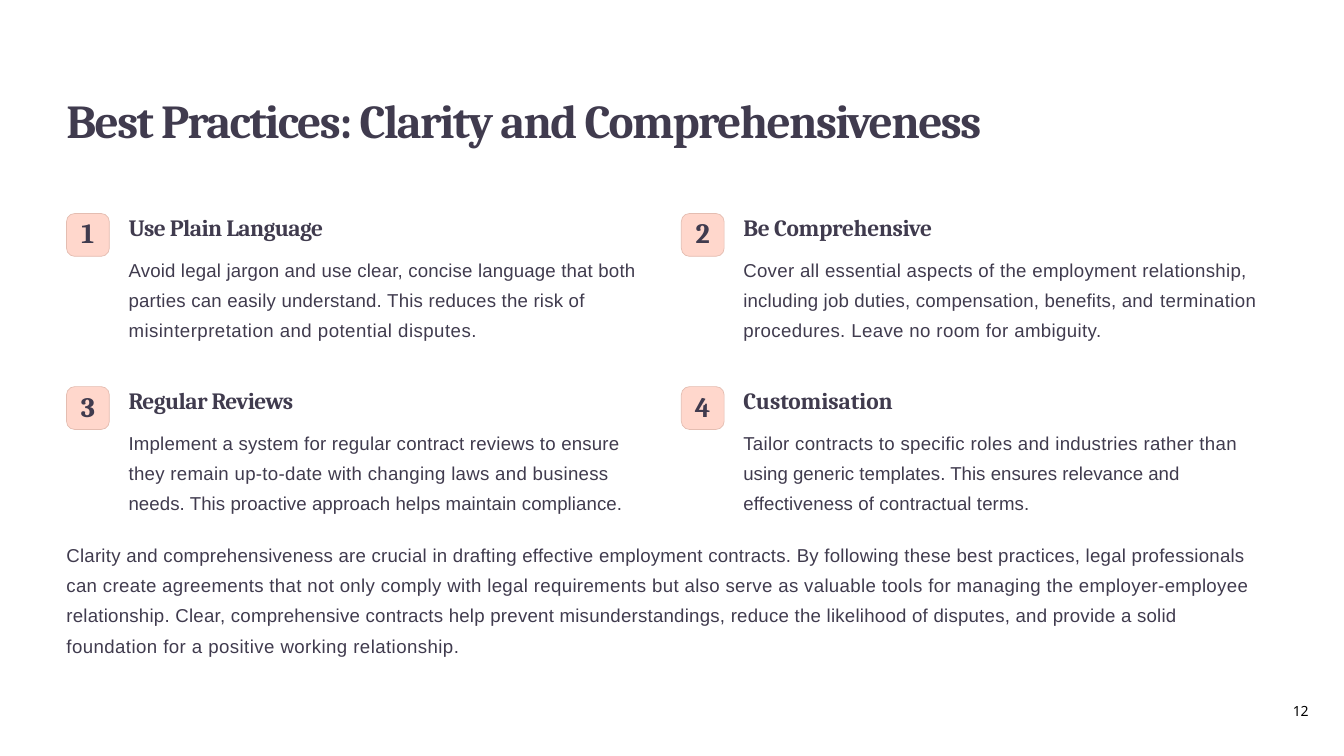
from dataclasses import dataclass

from pptx import Presentation
from pptx.dml.color import RGBColor
from pptx.enum.shapes import MSO_SHAPE
from pptx.enum.text import MSO_ANCHOR, PP_ALIGN
from pptx.util import Pt

INK = "403B4E"
PEACH = "FFD7CC"
PEACH_EDGE = "E4BDB1"
HEADING_FONT = "Cambria"
BODY_FONT = "Arial"

LEFT, TOP = 57, 183
COLUMN_STEP, ROW_STEP = 527, 148.4
BADGE_SIZE = 36.7
TEXT_OFFSET = 53.3


@dataclass(frozen=True)
class Line:
    """Text that fills one line, with its letter spacing in points."""
    text: str
    spacing: float


@dataclass(frozen=True)
class Practice:
    heading: Line
    body: tuple[Line, ...]


TITLE = Line("Best Practices: Clarity and Comprehensiveness", -1.41)

PRACTICES = [
    Practice(Line("Use Plain Language", -0.51), (
        Line("Avoid legal jargon and use clear, concise language that both ", 0.17),
        Line("parties can easily understand. This reduces the risk of ", 0.19),
        Line("misinterpretation and potential disputes.", 0.43))),
    Practice(Line("Be Comprehensive", -0.31), (
        Line("Cover all essential aspects of the employment relationship, ", 0.28),
        Line("including job duties, compensation, benefits, and ", 0.16),
        Line("termination procedures. Leave no room for ambiguity.", 0.34))),
    Practice(Line("Regular Reviews", -0.53), (
        Line("Implement a system for regular contract reviews to ensure ", 0.21),
        Line("they remain up-to-date with changing laws and business ", 0.27),
        Line("needs. This proactive approach helps maintain compliance.", 0.08))),
    Practice(Line("Customisation", -0.1), (
        Line("Tailor contracts to specific roles and industries rather than ", 0.27),
        Line("using generic templates. This ensures relevance and ", 0.02),
        Line("effectiveness of contractual terms.", 0.12))),
]

SUMMARY = (
    Line("Clarity and comprehensiveness are crucial in drafting effective employment "
         "contracts. By following these best practices, legal professionals ", 0.22),
    Line("can create agreements that not only comply with legal requirements but also "
         "serve as valuable tools for managing the employer-employee ", 0.3),
    Line("relationship. Clear, comprehensive contracts help prevent misunderstandings, "
         "reduce the likelihood of disputes, and provide a solid ", 0.24),
    Line("foundation for a positive working relationship.", 0.4),
)


def rgb(color: str) -> RGBColor:
    return RGBColor.from_string(color)


def set_insets(tf, left: float = 0, top: float = 0) -> None:
    tf.margin_left, tf.margin_top = Pt(left), Pt(top)
    tf.margin_right = tf.margin_bottom = Pt(0)
    tf.vertical_anchor = MSO_ANCHOR.TOP


def add_frame(s, left: float, top: float, width: float, height: float,
              inset_left: float = 0.9, inset_top: float = 0.9):
    tf = s.shapes.add_textbox(Pt(left), Pt(top), Pt(width), Pt(height)).text_frame
    tf.word_wrap = True
    set_insets(tf, inset_left, inset_top)
    return tf


def write(p, *lines: Line, size: float, font: str, color: str = INK, bold: bool = False,
          before: float = 1, line_spacing: float = 1, align=PP_ALIGN.LEFT) -> None:
    """Fill a paragraph with lines that flow on from one another."""
    p.space_before, p.line_spacing, p.alignment = Pt(before), line_spacing, align
    for line in lines:
        r = p.add_run()
        r.text = line.text
        r.font.name, r.font.size, r.font.bold = font, Pt(size), bold
        r.font.color.rgb = rgb(color)
        r._r.get_or_add_rPr().set("spc", str(round(line.spacing * 100)))


def add_badge(s, number: int, left: float, top: float) -> None:
    sp = s.shapes.add_shape(MSO_SHAPE.ROUNDED_RECTANGLE, Pt(left), Pt(top),
                            Pt(BADGE_SIZE), Pt(BADGE_SIZE))
    sp.adjustments[0] = 0.19
    sp.shadow.inherit = False
    sp.fill.solid()
    sp.fill.fore_color.rgb = rgb(PEACH)
    sp.line.color.rgb = rgb(PEACH_EDGE)
    sp.line.width = Pt(0.6)
    set_insets(sp.text_frame)
    write(sp.text_frame.paragraphs[0], Line(str(number), -0.6), size=24,
          font=HEADING_FONT, bold=True, align=PP_ALIGN.CENTER)


def add_practice(s, index: int, practice: Practice) -> None:
    row, column = divmod(index, 2)
    left, top = LEFT + column * COLUMN_STEP, TOP + row * ROW_STEP
    add_badge(s, index + 1, left, top)
    tf = add_frame(s, left + TEXT_OFFSET - 1, top - 1.5, 443, 112.3)
    write(tf.paragraphs[0], practice.heading, size=20, font=HEADING_FONT, bold=True)
    write(tf.add_paragraph(), *practice.body, size=16, font=BODY_FONT,
          before=8.5, line_spacing=1.35)


def main() -> None:
    prs = Presentation()
    prs.slide_width, prs.slide_height = Pt(1152), Pt(648)
    s = prs.slides.add_slide(prs.slide_layouts[6])

    tf = add_frame(s, LEFT - 1, 77, 919, 50.4)
    write(tf.paragraphs[0], TITLE, size=40.5, font=HEADING_FONT, bold=True)

    for index, practice in enumerate(PRACTICES):
        add_practice(s, index, practice)

    tf = add_frame(s, LEFT - 1, 458.6, 1034, 105.8)
    write(tf.paragraphs[0], *SUMMARY, size=16, font=BODY_FONT, line_spacing=1.35)

    tf = add_frame(s, 1105.2, 600.5, 20.2, 18, inset_left=2.9, inset_top=2)
    write(tf.paragraphs[0], Line("12", -0.2), size=12, font="Noto Sans",
          color="000000", before=1.8)

    prs.save("out.pptx")


if __name__ == "__main__":
    main()
